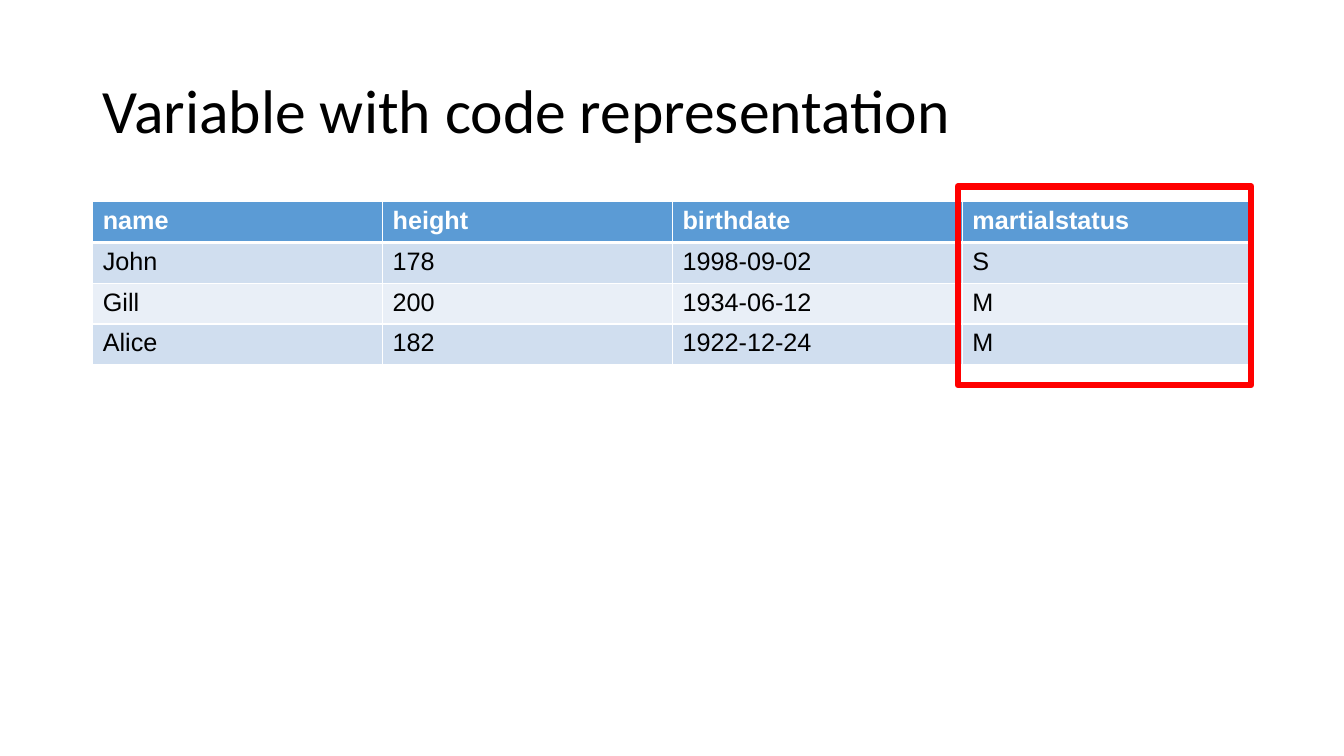
from lxml.etree import SubElement
from pptx import Presentation
from pptx.dml.color import RGBColor
from pptx.enum.shapes import MSO_SHAPE as SHAPE
from pptx.enum.text import MSO_ANCHOR as ANCHOR, PP_ALIGN as ALIGN
from pptx.oxml.ns import qn
from pptx.util import Inches, Pt

WHITE = RGBColor(0xFF, 0xFF, 0xFF)
BLACK = RGBColor(0, 0, 0)
BLUE = RGBColor(0x5B, 0x9B, 0xD5)
BAND_DARK = RGBColor(0xD0, 0xDE, 0xEF)
BAND_LIGHT = RGBColor(0xE9, 0xEF, 0xF7)
RED = RGBColor(0xFF, 0, 0)

TITLE_FONT = {"name": "Calibri", "size": Pt(44), "bold": False}
HEADER_FONT = {"name": "Arial", "size": Pt(18), "bold": True}
BODY_FONT = {**HEADER_FONT, "bold": False}

PEOPLE = [
    ("name", "height", "birthdate", "martialstatus"),
    ("John", "178", "1998-09-02", "S"),
    ("Gill", "200", "1934-06-12", "M"),
    ("Alice", "182", "1922-12-24", "M"),
]


def place(sp, box):
    for key, value in zip(("left", "top", "width", "height"), box):
        setattr(sp, key, Inches(value))


def write(tf, text, font, color):
    p = tf.paragraphs[0]
    p.alignment = ALIGN.LEFT
    r = p.add_run()
    r.text = text
    for key, value in font.items():
        setattr(r.font, key, value)
    r.font.color.rgb = color
    return p


def set_borders(cell, widths):
    tc_pr = cell._tc.get_or_add_tcPr()
    for side, width in widths.items():
        ln = SubElement(tc_pr, qn(f"a:ln{side}"), w=str(Pt(width)))
        fill = SubElement(ln, qn("a:solidFill"))
        SubElement(fill, qn("a:srgbClr"), val=str(WHITE))


def add_title(s, box, text):
    sp = s.shapes.title
    place(sp, box)
    tf = sp.text_frame
    tf.word_wrap = True
    tf.vertical_anchor = ANCHOR.MIDDLE
    write(tf, text, TITLE_FONT, BLACK).line_spacing = 0.9


def add_people_table(s, box, rows):
    size = [Inches(v) for v in box]
    table = s.shapes.add_table(len(rows), len(rows[0]), *size).table
    for i, row in enumerate(rows):
        header = i == 0
        fill = BLUE if header else BAND_DARK if i % 2 else BAND_LIGHT
        font, color = (HEADER_FONT, WHITE) if header else (BODY_FONT, BLACK)
        widths = {"L": 1, "R": 1, "T": 3 if i == 1 else 1, "B": 3 if header else 1}
        for j, text in enumerate(row):
            cell = table.cell(i, j)
            set_borders(cell, widths)
            cell.fill.solid()
            cell.fill.fore_color.rgb = fill
            write(cell.text_frame, text, font, color)


def add_highlight(s, box):
    sp = s.shapes.add_shape(SHAPE.RECTANGLE, *[Inches(v) for v in box])
    sp.shadow.inherit = False
    sp.fill.background()
    sp.line.color.rgb = RED
    sp.line.width = Pt(4.5)


def main():
    prs = Presentation()
    prs.slide_width, prs.slide_height = Inches(13.33), Inches(7.5)
    s = prs.slides.add_slide(prs.slide_layouts[5])
    add_title(s, (0.92, 0.4, 11.5, 1.45), "Variable with code representation")
    add_people_table(s, (0.92, 2, 11.5, 1.62), PEOPLE)
    add_highlight(s, (9.5, 1.85, 2.91, 1.97))
    prs.save("out.pptx")


if __name__ == "__main__":
    main()
